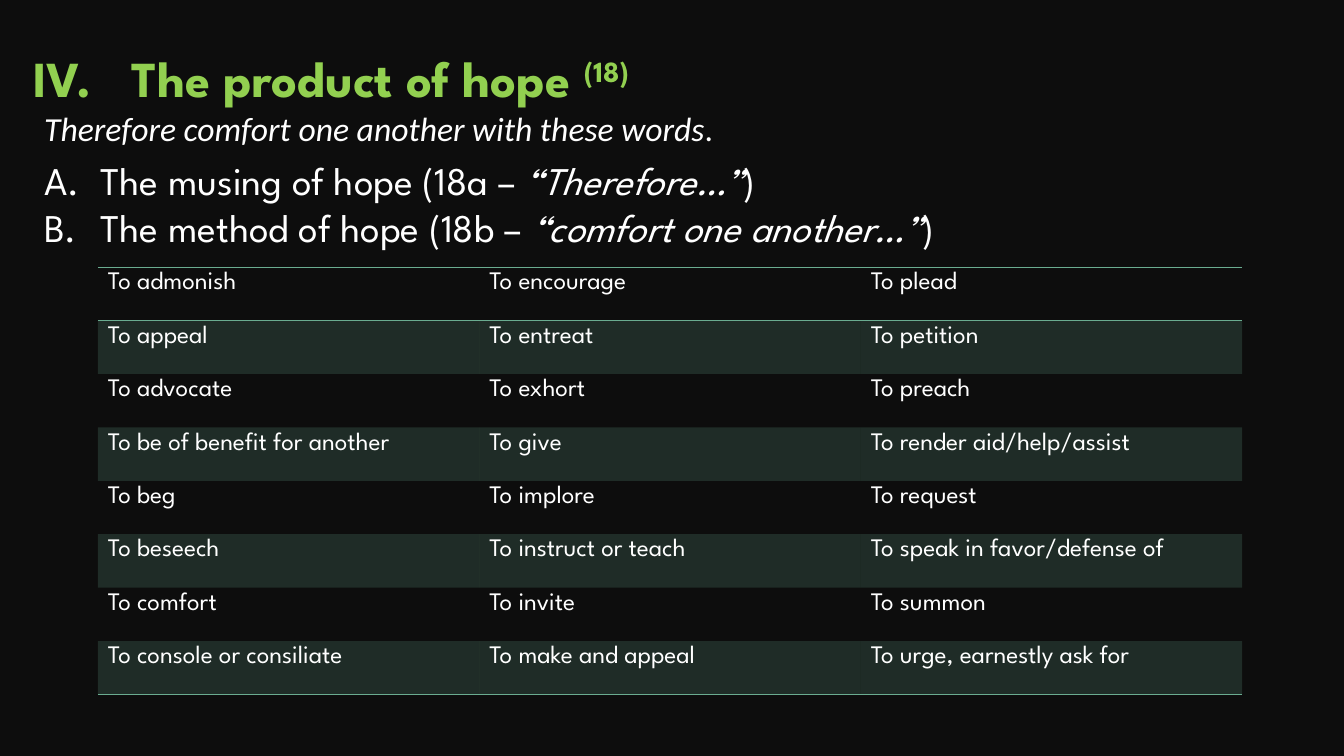
from dataclasses import dataclass

from lxml.etree import SubElement
from pptx import Presentation
from pptx.dml.color import RGBColor as Color
from pptx.enum.text import PP_ALIGN as Align
from pptx.oxml.ns import qn
from pptx.slide import Slide
from pptx.util import Inches, Pt


@dataclass(frozen=True)
class Theme:
    background: str = "0D0D0D"
    heading: str = "92D050"
    text: str = "FFFFFF"
    accent: str = "6AAC90"
    band_opacity: int = 20
    display_font: str = "League Spartan"
    verse_font: str = "Calibri"
    heading_size: int = 36
    verse_size: int = 24
    point_size: int = 28
    cell_size: int = 18


@dataclass(frozen=True)
class Box:
    left: float
    top: float
    width: float
    height: float

    def lengths(self) -> tuple:
        return tuple(Inches(n) for n in (self.left, self.top, self.width, self.height))


@dataclass(frozen=True)
class Point:
    lead: str
    quote: str


THEME = Theme()
HEADING_BOX = Box(0.23, 0.28, 12.78, 0.94)
VERSE_BOX = Box(0.34, 1.02, 12.68, 0.5)
POINTS_BOX = Box(0.34, 1.5, 12.09, 1.04)
TABLE_BOX = Box(0.97, 2.65, 11.35, 4.24)
HEADING_SPACE = 0.14
HEADING_TAB = 0.98
POINT_INDENT = 0.56
PLAIN_TABLE_STYLE = "{2D5ABB26-0587-4C30-8999-92F81FD0307C}"

POINTS = [
    Point("The musing of hope (18a – ", "“Therefore…”"),
    Point("The method of hope (18b – ", "“comfort one another…”"),
]
MEANINGS = [
    ("To admonish", "To encourage", "To plead"),
    ("To appeal", "To entreat", "To petition"),
    ("To advocate", "To exhort", "To preach"),
    ("To be of benefit for another", "To give", "To render aid/help/assist"),
    ("To beg", "To implore", "To request"),
    ("To beseech", "To instruct or teach", "To speak in favor/defense of"),
    ("To comfort", "To invite", "To summon"),
    ("To console or consiliate", "To make and appeal", "To urge, earnestly ask for"),
]


def add_run(paragraph, text: str, *, size: int, font: str = THEME.display_font,
            color: str = THEME.text, bold: bool = False, italic: bool = False,
            baseline: int = 0) -> None:
    run = paragraph.add_run()
    run.text = text
    run.font.size = Pt(size)
    run.font.name = font
    run.font.color.rgb = Color.from_string(color)
    run.font.bold = bold
    run.font.italic = italic
    if baseline:
        run.font._element.set("baseline", str(baseline * 1000))


def add_text_frame(slide: Slide, box: Box):
    frame = slide.shapes.add_textbox(*box.lengths()).text_frame
    frame.word_wrap = True
    return frame


def add_heading(slide: Slide) -> None:
    frame = add_text_frame(slide, HEADING_BOX)
    frame.margin_top = Inches(0.05 + HEADING_SPACE)
    paragraph = frame.paragraphs[0]
    tabs = SubElement(paragraph._p.get_or_add_pPr(), qn("a:tabLst"))
    SubElement(tabs, qn("a:tab"), pos=str(Inches(HEADING_TAB)), algn="l")
    style = dict(size=THEME.heading_size, color=THEME.heading, bold=True)
    add_run(paragraph, "IV.\tThe product of hope ", **style)
    add_run(paragraph, "(18)", baseline=30, **style)


def add_verse(slide: Slide) -> None:
    paragraph = add_text_frame(slide, VERSE_BOX).paragraphs[0]
    paragraph.alignment = Align.JUSTIFY
    style = dict(size=THEME.verse_size, font=THEME.verse_font)
    add_run(paragraph, "Therefore comfort one another with these words", italic=True, **style)
    add_run(paragraph, ".", **style)


def add_points(slide: Slide) -> None:
    frame = add_text_frame(slide, POINTS_BOX)
    for index, point in enumerate(POINTS):
        paragraph = frame.add_paragraph() if index else frame.paragraphs[0]
        paragraph.alignment = Align.JUSTIFY
        properties = paragraph._p.get_or_add_pPr()
        properties.set("marL", str(Inches(POINT_INDENT)))
        properties.set("indent", str(-Inches(POINT_INDENT)))
        SubElement(properties, qn("a:buFont"), typeface="+mj-lt")
        SubElement(properties, qn("a:buAutoNum"), type="alphaUcPeriod")
        add_run(paragraph, point.lead, size=THEME.point_size)
        add_run(paragraph, point.quote, size=THEME.point_size, italic=True)
        add_run(paragraph, ")", size=THEME.point_size)


def style_cell(cell, *, banded: bool, edges: list[str]) -> None:
    properties = cell._tc.get_or_add_tcPr()
    # Borders come before the fill
    for edge in edges:
        line = SubElement(properties, qn(f"a:{edge}"), w=str(Pt(1)))
        solid = SubElement(line, qn("a:solidFill"))
        SubElement(solid, qn("a:srgbClr"), val=THEME.accent)
    if not banded:
        cell.fill.background()
        return
    cell.fill.solid()
    cell.fill.fore_color.rgb = Color.from_string(THEME.accent)
    color = properties.find(qn("a:solidFill")).find(qn("a:srgbClr"))
    SubElement(color, qn("a:alpha"), val=str(THEME.band_opacity * 1000))


def add_meanings(slide: Slide) -> None:
    last = len(MEANINGS) - 1
    frame = slide.shapes.add_table(len(MEANINGS), len(MEANINGS[0]), *TABLE_BOX.lengths())
    table = frame.table
    table.first_row = False
    table.horz_banding = False
    table._tbl.tblPr.find(qn("a:tableStyleId")).text = PLAIN_TABLE_STYLE
    for row, meanings in enumerate(MEANINGS):
        edges = ["lnT"] if row == 0 else []
        if row in (0, last):
            edges.append("lnB")
        for column, meaning in enumerate(meanings):
            cell = table.cell(row, column)
            add_run(cell.text_frame.paragraphs[0], meaning, size=THEME.cell_size)
            style_cell(cell, banded=row % 2 == 1, edges=edges)


def main() -> None:
    presentation = Presentation()
    presentation.slide_width = Inches(13.33)
    presentation.slide_height = Inches(7.5)
    slide = presentation.slides.add_slide(presentation.slide_layouts[6])
    slide.background.fill.solid()
    slide.background.fill.fore_color.rgb = Color.from_string(THEME.background)

    # Heading and verse
    add_heading(slide)
    add_verse(slide)
    # Lettered points
    add_points(slide)
    # Table of meanings
    add_meanings(slide)
    presentation.save("out.pptx")


if __name__ == "__main__":
    main()
